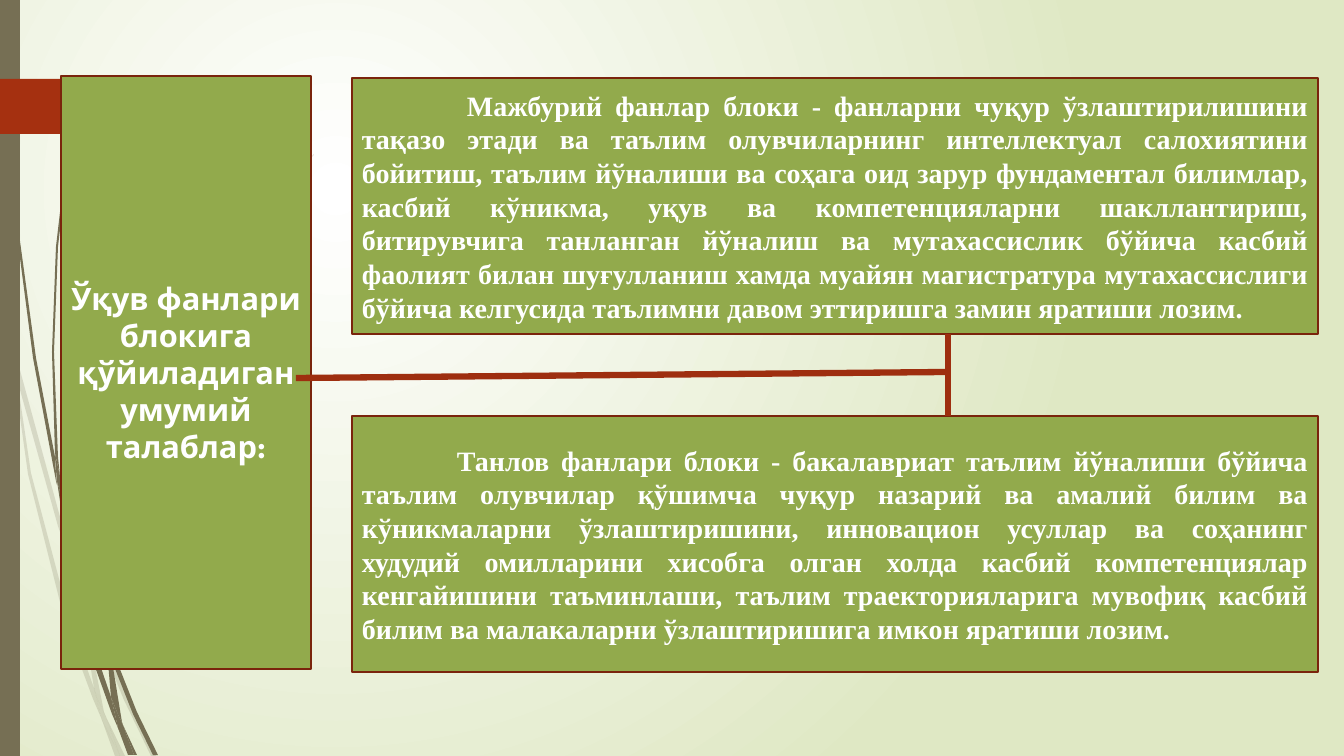
from collections import namedtuple
from lxml.etree import SubElement
from pptx import Presentation
from pptx.dml.color import RGBColor as Color
from pptx.enum.shapes import MSO_CONNECTOR as Connector, MSO_SHAPE as Shape
from pptx.enum.text import MSO_ANCHOR as Anchor, PP_ALIGN as Align
from pptx.oxml.ns import qn
from pptx.util import Pt

PX = 914400 / 100.8
WIDTH, HEIGHT = 1344, 756
COLORS = {
    "white": "FFFFFF",
    "meadow": "DFE8C4",
    "stalk": "766F54",
    "tab": "A53010",
    "panel": "92AA4C",
    "border": "7A240C",
    "link": "9E2E0F",
}
Box = namedtuple("Box", "left top width height")

TITLE = "Ўқув фанлари блокига қўйиладиган умумий талаблар:"
REQUIRED = (
    "Мажбурий фанлар блоки - фанларни чуқур ўзлаштирилишини тақазо этади ва "
    "таълим олувчиларнинг интеллектуал салохиятини бойитиш, таълим йўналиши ва "
    "соҳага оид зарур фундаментал билимлар, касбий кўникма, уқув ва "
    "компетенцияларни шакллантириш, битирувчига танланган йўналиш ва "
    "мутахассислик бўйича касбий фаолият билан шуғулланиш хамда муайян "
    "магистратура мутахассислиги бўйича келгусида таълимни давом эттиришга "
    "замин яратиши лозим."
)
ELECTIVE = (
    "Танлов фанлари блоки - бакалавриат таълим йўналиши бўйича таълим олувчилар "
    "қўшимча чуқур назарий ва амалий билим ва кўникмаларни ўзлаштиришини, "
    "инновацион усуллар ва соҳанинг худудий омилларини хисобга олган холда "
    "касбий компетенциялар кенгайишини таъминлаши, таълим траекторияларига "
    "мувофиқ касбий билим ва малакаларни ўзлаштиришига имкон яратиши лозим."
)

PALE_STALKS = [
    [(11, 353), (9, 325), (0, 284), (0, 301), (10, 347)],
    [(58, 526), (85, 604), (86, 591), (62, 524), (14, 348), (17, 379)],
    [(93, 612), (89, 601), (89, 615), (124, 700), (151, 756), (156, 756), (128, 698)],
    [(120, 756), (125, 756), (106, 717)],
    [(94, 688), (71, 624), (31, 473), (17, 379), (11, 353), (28, 474), (66, 626),
     (93, 699), (102, 720), (100, 713)],
    [(85, 604), (88, 651), (94, 688), (97, 698), (106, 717), (104, 712), (92, 651),
     (89, 615), (89, 613)],
    [(89, 589), (111, 466), (161, 352), (231, 247), (270, 200), (292, 176), (314, 155),
     (314, 154), (291, 176), (270, 199), (230, 246), (159, 351), (108, 465), (86, 589),
     (86, 591), (89, 601)],
    [(102, 720), (115, 756), (120, 756)],
    [(97, 698), (94, 688), (100, 713), (102, 720), (120, 756), (106, 717)],
]
DARK_STALKS = [
    [(7, 111), (17, 235), (33, 358), (56, 481), (57, 485), (55, 461), (55, 457),
     (36, 358), (19, 234), (8, 110), (5, 48), (4, 0), (3, 0), (4, 48)],
    [(89, 597), (107, 650), (107, 638), (107, 636), (94, 595), (60, 476), (65, 509)],
    [(114, 654), (111, 646), (112, 661), (133, 714), (153, 755), (158, 755), (137, 712)],
    [(111, 697), (99, 662), (73, 560), (65, 509), (57, 481), (69, 561), (94, 664),
     (112, 714), (118, 728), (117, 723)],
    [(60, 476), (58, 457), (54, 352), (58, 247), (64, 195), (71, 142), (70, 142),
     (62, 195), (56, 247), (52, 352), (55, 453)],
    [(134, 755), (137, 755), (123, 725)],
    [(57, 481), (65, 509), (60, 476), (55, 453), (55, 457)],
    [(118, 728), (128, 755), (132, 755)],
    [(107, 650), (111, 697), (117, 712), (123, 725), (122, 722), (112, 661), (110, 656)],
    [(117, 712), (111, 697), (117, 723), (118, 728), (131, 755), (134, 755), (123, 725)],
]
TAB_OUTLINE = [(0, 0), (147, 0), (149, 1), (174, 26), (174, 29), (149, 54), (147, 55), (0, 55)]


def emu(length):
    return round(length * PX)


def rgb(name):
    return Color.from_string(COLORS[name])


def paint(shape, fill, line=None, opacity=None):
    shape.shadow.inherit = False
    shape.fill.solid()
    shape.fill.fore_color.rgb = rgb(fill)
    if opacity:
        color = shape.fill._xPr.find(".//" + qn("a:srgbClr"))
        SubElement(color, qn("a:alpha")).set("val", str(opacity * 1000))
    if line:
        shape.line.color.rgb = rgb(line)
        shape.line.width = Pt(1.25)
    else:
        shape.line.fill.background()


def write_text(shape, text, font, size, align, indent=0):
    frame = shape.text_frame
    frame.word_wrap = True
    frame.vertical_anchor = Anchor.MIDDLE
    para = frame.paragraphs[0]
    para.alignment = align
    if indent:
        para._p.get_or_add_pPr().set("indent", str(emu(indent)))
    span = para.add_run()
    span.text = text
    span.font.name = font
    span.font.size = Pt(size)
    span.font.bold = True
    span.font.color.rgb = rgb("white")


def add_box(page, box, fill, line=None):
    shape = page.shapes.add_shape(Shape.RECTANGLE, *map(emu, box))
    paint(shape, fill, line)
    return shape


def add_outline(page, box, points, fill, opacity=None):
    placed = [(box.left + x, box.top + y) for x, y in points]
    builder = page.shapes.build_freeform(*placed[0], scale=PX)
    builder.add_line_segments(placed[1:], close=True)
    paint(builder.convert_to_shape(), fill, opacity=opacity)


def add_link(page, start, end):
    link = page.shapes.add_connector(Connector.STRAIGHT, *map(emu, start + end))
    link.line.color.rgb = rgb("link")
    link.line.width = Pt(4.5)
    SubElement(link._element.spPr, qn("a:effectLst"))


def draw_background(page):
    fill = page.background.fill
    fill.gradient()
    for stop, position, name in zip(fill.gradient_stops, (0, 1), ("white", "meadow")):
        stop.position = position
        stop.color.rgb = rgb(name)
    gradient = page._element.find(".//" + qn("a:gradFill"))
    gradient.remove(gradient.find(qn("a:lin")))
    circle = SubElement(gradient, qn("a:path"))
    circle.set("path", "circle")
    focus = SubElement(circle, qn("a:fillToRect"))
    for side, percent in zip("ltrb", (50, 50, 100, 100)):
        focus.set(side, str(percent * 1000))


def draw_decoration(page, box):
    for stalks, opacity in ((PALE_STALKS, 20), (DARK_STALKS, None)):
        for points in stalks:
            add_outline(page, box, points, "stalk", opacity)
    add_box(page, box._replace(width=20), "stalk")
    add_outline(page, box._replace(top=box.top + 79), TAB_OUTLINE, "tab")


def draw_requirements(page, box):
    title = add_box(page, box._replace(width=250, height=593), "panel", "border")
    write_text(title, TITLE, "League Spartan", 22, Align.CENTER)
    upper = Box(box.left + 291, box.top + 2, box.width - 291, 256)
    lower = upper._replace(top=upper.top + 338)
    for area, text, indent in ((upper, REQUIRED, 105), (lower, ELECTIVE, 95)):
        block = add_box(page, area, "panel", "border")
        write_text(block, text, "Times New Roman", 20, Align.JUSTIFY, indent)
    joint = upper.left + 596
    bottom = upper.top + upper.height
    add_link(page, (box.left + 235, bottom + 44), (joint, bottom + 38))
    add_link(page, (joint, bottom), (joint, lower.top))


def main():
    deck = Presentation()
    deck.slide_width, deck.slide_height = emu(WIDTH), emu(HEIGHT)
    page = deck.slides.add_slide(deck.slide_layouts[6])
    draw_background(page)
    draw_decoration(page, Box(0, 0, WIDTH, HEIGHT))
    draw_requirements(page, Box(61, 76, 1257, 596))
    deck.save("out.pptx")


if __name__ == "__main__":
    main()
